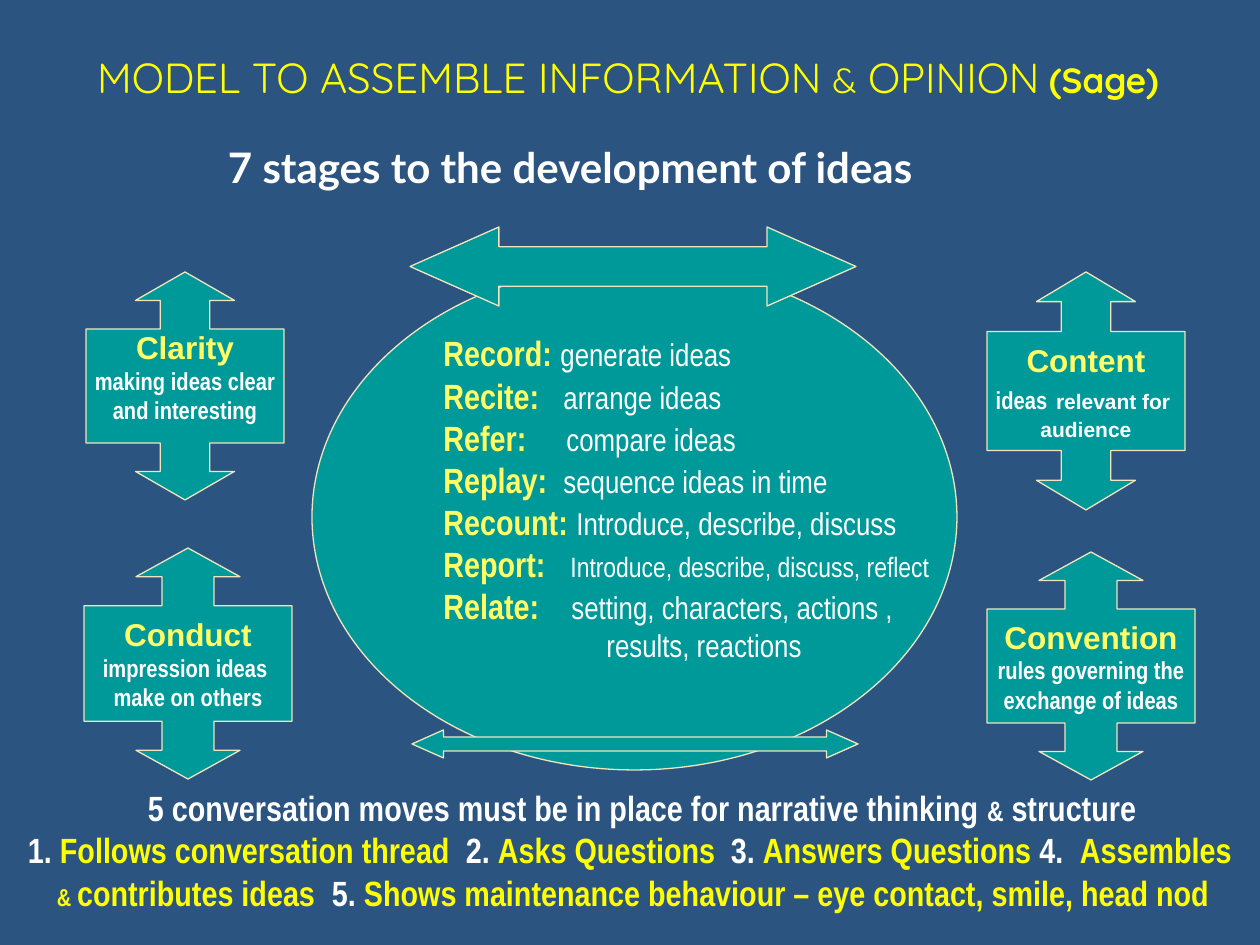
"""Build a slide on a seven-stage model for assembling information and opinion."""
import pptx
import pptx.dml.color
import pptx.enum.shapes
import pptx.enum.text
import pptx.oxml.ns
import pptx.util
from lxml import etree

SHAPES = pptx.enum.shapes.MSO_SHAPE
ALIGN = pptx.enum.text.PP_ALIGN
ANCHOR = pptx.enum.text.MSO_ANCHOR
PX = 914400 / 126

THEME = {
    "background": "2B5481",
    "fill": "009999",
    "line": "EFE5BE",
    "line_width": 0.75,
    "text": {
        "title": ("Quicksand", 24, "FFFF00", False),
        "title_small": ("Quicksand", 20, "FFFF00", False),
        "title_tag": ("Quicksand", 20, "FFFF00", True),
        "subtitle": ("Lato", 24, "FFFFFF", True),
        "heading": ("Arial", 18, "FFFF66", True),
        "note": ("Arial Narrow", 14, "FFFFFF", True),
        "note_gap": ("Arial", 18, "FFFFFF", True),
        "note_wide": ("Arial", 12, "FFFFFF", True),
        "stage": ("Arial Narrow", 20, "FFFF66", True),
        "detail": ("Arial Narrow", 18, "FFFFFF", False),
        "detail_small": ("Arial Narrow", 16, "FFFFFF", False),
        "move": ("Arial Narrow", 20, "FFFF00", True),
        "number": ("Arial Narrow", 20, "FFFFFF", True),
        "number_small": ("Arial Narrow", 16, "FFFFFF", True),
        "move_small": ("Arial Narrow", 14, "FFFF00", True),
    },
}

TITLE = [
    ("MODEL TO ASSEMBLE INFORMATION ", "title"), ("&", "title_small"),
    (" OPINION", "title"), (" ", "title_small"), ("(Sage)", "title_tag"),
]
SUBTITLE = [("7 stages to the development of ideas", "subtitle")]

CALLOUTS = [
    ((86, 272, 198, 228), 0.144, (0, 19), "Clarity",
     [[("making ideas clear", "note")], [("and interesting", "note")]]),
    ((84, 548, 208, 231), 0.138, (6, 6), "Conduct",
     [[("impression ideas ", "note")], [("make on others", "note")]]),
    ((987, 272, 198, 238), 0.15, (6, 6), "Content",
     [[("ideas", "note"), (" ", "note_gap"), ("relevant for ", "note_wide")],
      [("audience", "note_wide")]]),
    ((987, 552, 208, 228), 0.137, (6, 6), "Convention",
     [[("rules governing the", "note")], [("exchange of ideas", "note")]]),
]

STAGES = [
    ("Record:", 117, "generate ideas", "detail"),
    ("Recite:", 120, "arrange ideas", "detail"),
    ("Refer:", 123, "compare ideas", "detail"),
    ("Replay:", 120, "sequence ideas in time", "detail"),
    ("Recount:", 133, "Introduce, describe, discuss", "detail"),
    ("Report:", 127, "Introduce, describe, discuss, reflect", "detail_small"),
    ("Relate:", 128, "setting, characters, actions ,", "detail"),
    ("", 163, "results, reactions", "detail"),
]

MOVES = [
    ((120,), [
        ("\t5 conversation moves must be in place for narrative thinking ", "number"),
        ("&", "number_small"), (" structure", "number")]),
    ((438, 703, 1052), [
        ("1. ", "number"), ("Follows conversation thread\t", "move"),
        ("2. ", "number"), ("Asks Questions\t", "move"),
        ("3. ", "number"), ("Answers Questions ", "move"),
        ("4.\t", "number"), ("Assembles", "move")]),
    ((29, 304), [
        ("\t& ", "move_small"), ("contributes ideas\t", "move"),
        ("5.", "number"),
        (" Shows maintenance behaviour – eye contact, smile, head nod", "move")]),
]

ARROWS = [(412, 730, 446, 28), (410, 227, 446, 79)]


def px(value):
    return pptx.util.Emu(round(value * PX))


def color(name):
    return pptx.dml.color.RGBColor.from_string(name)


def set_frame(shape, insets, anchor=ANCHOR.TOP, wrap=True):
    frame = shape.text_frame
    frame.word_wrap = wrap
    frame.vertical_anchor = anchor
    sides = ("margin_left", "margin_top", "margin_right", "margin_bottom")
    for side, inset in zip(sides, insets):
        setattr(frame, side, px(inset))
    return frame


def write_paragraph(frame, spans, align=ALIGN.LEFT, tabs=()):
    first = frame.paragraphs[0]
    para = frame.add_paragraph() if first.runs else first
    para.alignment = align
    if tabs:
        properties = para._p.get_or_add_pPr()
        stops = etree.SubElement(properties, pptx.oxml.ns.qn("a:tabLst"))
        for tab in tabs:
            etree.SubElement(stops, pptx.oxml.ns.qn("a:tab"), pos=str(px(tab)), algn="l")
    for text, style in spans:
        span = para.add_run()
        span.text = text
        font, size, ink, bold = THEME["text"][style]
        span.font.name = font
        span.font.size = pptx.util.Pt(size)
        span.font.bold = bold
        span.font.color.rgb = color(ink)


def add_figure(page, kind, place, adjustments=()):
    shape = page.shapes.add_shape(kind, *map(px, place))
    shape.shadow.inherit = False
    shape.fill.solid()
    shape.fill.fore_color.rgb = color(THEME["fill"])
    shape.line.color.rgb = color(THEME["line"])
    shape.line.width = pptx.util.Pt(THEME["line_width"])
    for index, value in enumerate(adjustments):
        shape.adjustments[index] = value
    return shape


def add_text(page, place, insets):
    return set_frame(page.shapes.add_textbox(*map(px, place)), insets)


def main():
    deck = pptx.Presentation()
    deck.slide_width, deck.slide_height = px(1260), px(945)
    page = deck.slides.add_slide(deck.slide_layouts[6])
    page.background.fill.solid()
    page.background.fill.fore_color.rgb = color(THEME["background"])

    title = add_text(page, (0, 16, 1260, 122), (13, 35, 17, 6))
    write_paragraph(title, TITLE, ALIGN.CENTER)

    for place, head, (top, bottom), heading, notes in CALLOUTS:
        callout = add_figure(page, SHAPES.UP_DOWN_ARROW_CALLOUT, place, (0.25, 0.25, head, 0.5))
        frame = set_frame(callout, (13, top, 13, bottom), ANCHOR.MIDDLE, False)
        for spans in [[(heading, "heading")], *notes]:
            write_paragraph(frame, spans, ALIGN.CENTER)

    subtitle = add_text(page, (184, 135, 873, 63), (44, 7, 13, 6))
    write_paragraph(subtitle, SUBTITLE)

    ellipse = add_figure(page, SHAPES.OVAL, (312, 264, 645, 506))
    frame = set_frame(ellipse, (37, 6, 13, 44), ANCHOR.MIDDLE, False)
    for stage, tab, detail, style in STAGES:
        label = (stage + "\t", "stage" if stage else style)
        write_paragraph(frame, [label, (detail, style)], tabs=(tab,))

    for place in ARROWS:
        add_figure(page, SHAPES.LEFT_RIGHT_ARROW, place, (0.5, 1.125))

    footer = add_text(page, (0, 780, 1260, 140), (28, 7, 13, 6))
    for tabs, spans in MOVES:
        write_paragraph(footer, spans, tabs=tabs)

    deck.save("out.pptx")


if __name__ == "__main__":
    main()
